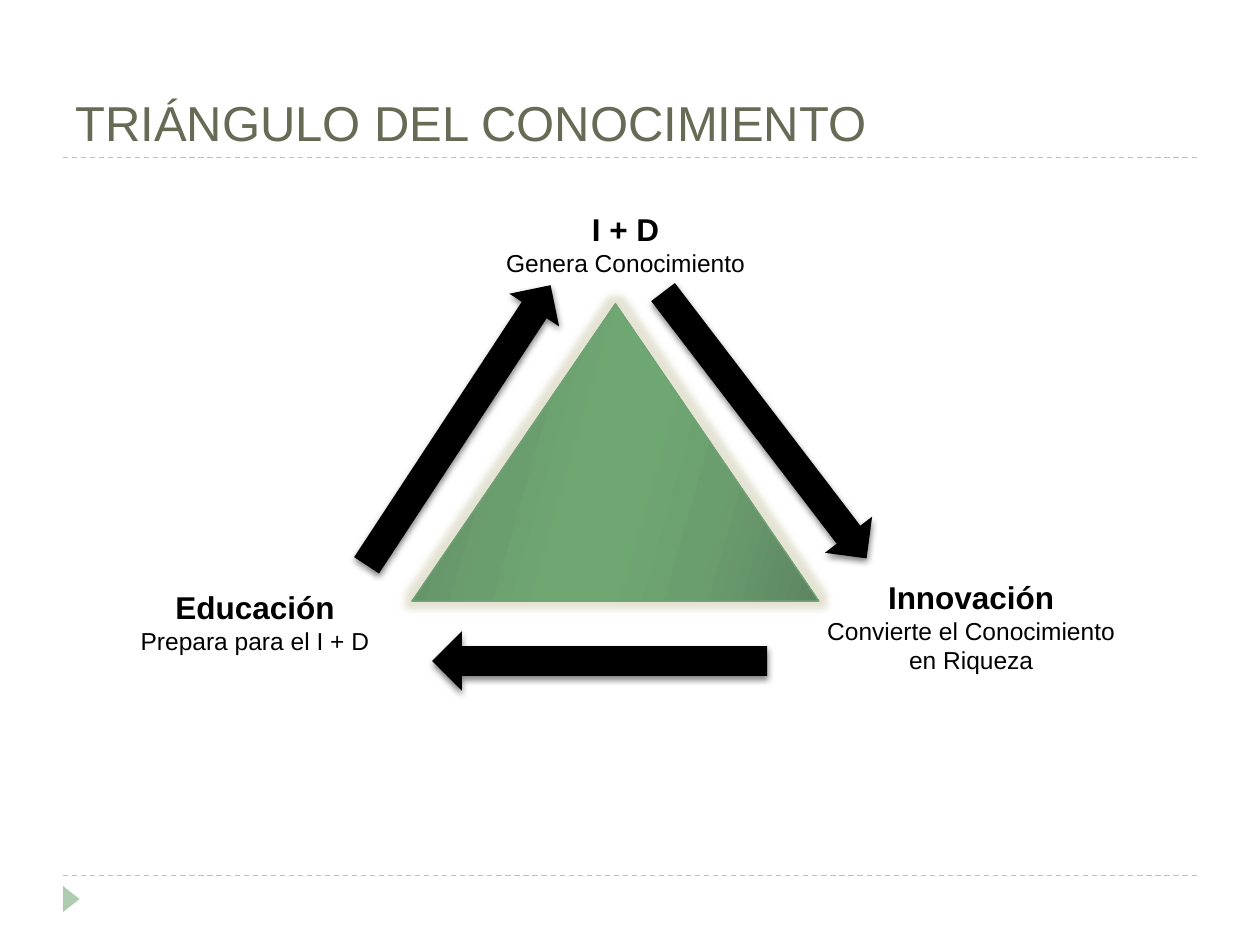
"""Build the knowledge triangle slide."""
from lxml.etree import SubElement
from pptx import Presentation
from pptx.dml.color import RGBColor
from pptx.enum.dml import MSO_LINE
from pptx.enum.shapes import MSO_CONNECTOR, MSO_SHAPE
from pptx.enum.text import MSO_ANCHOR, MSO_AUTO_SIZE, PP_ALIGN
from pptx.oxml.ns import qn
from pptx.util import Pt

FONT = "Arial"
PALE = "B0CCB0"
STOPS = [(0, "5D8561"), (30, "6B9E6F"), (45, "6EA772"),
         (55, "6EA772"), (73, "6B9E6F"), (100, "5D8561")]


def color(hex_code):
    """Return the colour for a hex string."""
    return RGBColor.from_string(hex_code)


def add_effect(sp, tag, hex_code, alpha, **attrs):
    """Append one effect to the shape's effect list."""
    effects = sp._element.spPr.find(qn("a:effectLst"))
    effect = SubElement(effects, qn(tag), {k: str(v) for k, v in attrs.items()})
    clr = SubElement(effect, qn("a:srgbClr"), val=hex_code)
    SubElement(clr, qn("a:alpha"), val=str(alpha * 1000))


def add_rule(slide, y):
    """Draw a dashed rule across the slide."""
    line = slide.shapes.add_connector(MSO_CONNECTOR.STRAIGHT, Pt(36), Pt(y), Pt(684), Pt(y))
    line.line.color.rgb = color(PALE)
    line.line.width = Pt(0.75)
    line.line.dash_style = MSO_LINE.DASH
    SubElement(line._element.spPr, qn("a:effectLst"))


def add_shape(slide, kind, x, y, w, h, fill, rotation=0):
    """Add a plain filled shape without outline."""
    sp = slide.shapes.add_shape(kind, Pt(x), Pt(y), Pt(w), Pt(h))
    sp.rotation = rotation
    sp.shadow.inherit = False
    sp.fill.solid()
    sp.fill.fore_color.rgb = color(fill)
    sp.line.fill.background()
    return sp


def add_triangle(slide):
    """Add the central glowing triangle with its gradient."""
    sp = add_shape(slide, MSO_SHAPE.ISOSCELES_TRIANGLE, 235.4, 173.5, 232.6, 170, "6EA772")
    sp.fill.gradient()
    sp.fill.gradient_angle = 344
    stops = sp._element.spPr.find(".//" + qn("a:gsLst"))
    stops.clear()
    for pos, hex_code in STOPS:
        stop = SubElement(stops, qn("a:gs"), pos=str(pos * 1000))
        SubElement(stop, qn("a:srgbClr"), val=hex_code)
    sp.line.color.rgb = color("72A376")
    sp.line.width = Pt(0.75)
    add_effect(sp, "a:glow", "E4E3D4", 100, rad=Pt(8))


def add_arrow(slide, x, y, rotation):
    """Add a black block arrow with a soft shadow."""
    sp = add_shape(slide, MSO_SHAPE.RIGHT_ARROW, x, y, 191.5, 34, "000000", rotation)
    add_effect(sp, "a:outerShdw", "000000", 50, blurRad=Pt(4), dist=Pt(2),
               dir=90 * 60000, rotWithShape=0)


def add_text(slide, x, y, w, h, lines, hex_code="000000", align=PP_ALIGN.CENTER):
    """Add a text box from (text, size, bold) lines."""
    tf = slide.shapes.add_textbox(Pt(x), Pt(y), Pt(w), Pt(h)).text_frame
    tf.word_wrap = False
    for i, (text, size, bold) in enumerate(lines):
        p = tf.add_paragraph() if i else tf.paragraphs[0]
        p.text = text
        p.alignment = align
        p.font.name = FONT
        p.font.size = Pt(size)
        p.font.bold = bold
        p.font.color.rgb = color(hex_code)
    return tf


def add_label(slide, x, y, w, h, heading, *details):
    """Add a corner label with a bold heading and its details."""
    lines = [(heading, 18, True)] + [(text, 14, False) for text in details]
    add_text(slide, x, y, w, h, lines).auto_size = MSO_AUTO_SIZE.SHAPE_TO_FIT_TEXT


def main():
    """Build and save the slide."""
    prs = Presentation()
    prs.slide_width, prs.slide_height = Pt(720), Pt(540)
    slide = prs.slides.add_slide(prs.slide_layouts[6])

    for y in (500.4, 90):
        add_rule(slide, y)
    add_shape(slide, MSO_SHAPE.ISOSCELES_TRIANGLE, 33.2, 509, 15, 9.5, PALE, 90)
    title = add_text(slide, 36, 12, 590.4, 78, [("TRIÁNGULO DEL CONOCIMIENTO", 28, False)],
                     "676A55", PP_ALIGN.LEFT)
    title.word_wrap = True
    title.vertical_anchor = MSO_ANCHOR.BOTTOM

    add_triangle(slide)
    add_label(slide, 281.5, 116.6, 152, 46, "I + D", "Genera Conocimiento")
    add_label(slide, 72.7, 332.6, 146, 46, "Educación", "Prepara para el I + D")
    add_label(slide, 465, 326.9, 180, 63.4, "Innovación",
              "Convierte el Conocimiento", "en Riqueza")
    for x, y, rotation in ((166.3, 226, 303.3), (341.3, 226, 52.6), (246.9, 360.7, 180)):
        add_arrow(slide, x, y, rotation)

    prs.save("out.pptx")


if __name__ == "__main__":
    main()
